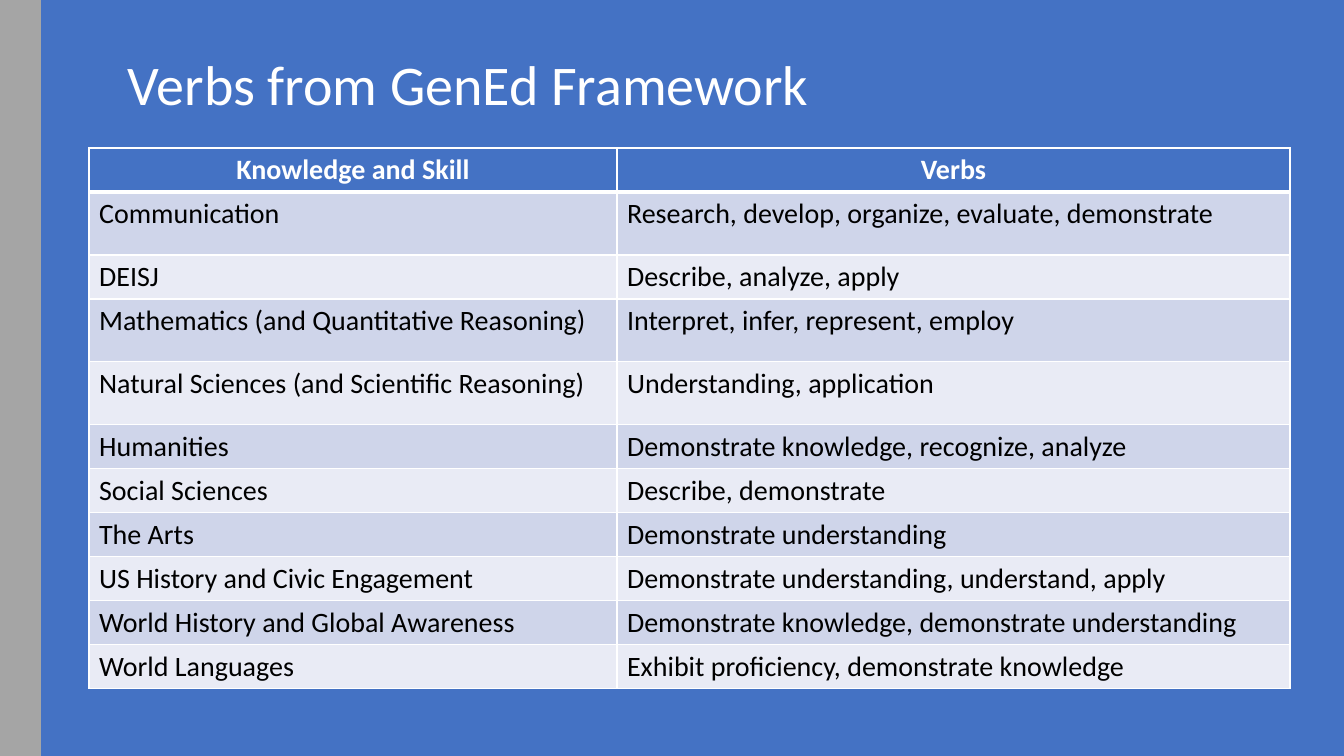
from lxml.etree import SubElement
from pptx import Presentation
from pptx.dml.color import RGBColor
from pptx.enum.shapes import MSO_SHAPE
from pptx.enum.text import MSO_ANCHOR, PP_ALIGN
from pptx.oxml.ns import qn
from pptx.util import Emu, Pt

SCALE = 914400 / 100.8
HUES = {"blue": "4472C4", "gray": "A5A5A5", "white": "FFFFFF",
        "black": "000000", "dark": "CFD5EA", "light": "E9EBF5"}
SHORT, TALL = 44, 63
ROWS = [
    ("Knowledge and Skill", "Verbs", SHORT),
    ("Communication", "Research, develop, organize, evaluate, demonstrate", TALL),
    ("DEISJ", "Describe, analyze, apply", SHORT),
    ("Mathematics (and Quantitative Reasoning)", "Interpret, infer, represent, employ", TALL),
    ("Natural Sciences (and Scientific Reasoning)", "Understanding, application", TALL),
    ("Humanities", "Demonstrate knowledge, recognize, analyze", SHORT),
    ("Social Sciences", "Describe, demonstrate", SHORT),
    ("The Arts", "Demonstrate understanding", SHORT),
    ("US History and Civic Engagement", "Demonstrate understanding, understand, apply", SHORT),
    ("World History and Global Awareness", "Demonstrate knowledge, demonstrate understanding", SHORT),
    ("World Languages", "Exhibit proficiency, demonstrate knowledge", SHORT),
]


def px(size):
    return Emu(round(size * SCALE))


def hue(name):
    return RGBColor.from_string(HUES[name])


class Deck:
    """Hold the style and the current slide, and draw each kind of element."""

    def __init__(self, wide, high):
        self.file = Presentation()
        self.file.slide_width, self.file.slide_height = px(wide), px(high)
        self.slide = self.file.slides.add_slide(self.file.slide_layouts[6])
        self.font = {"name": "Calibri", "size": Pt(20), "bold": False}

    def label(self, frame, text, color, align=PP_ALIGN.LEFT, **style):
        para = frame.paragraphs[0]
        para.alignment = align
        run = para.add_run()
        run.text = text
        for key, value in {**self.font, **style}.items():
            setattr(run.font, key, value)
        run.font.color.rgb = hue(color)
        return para

    def panel(self, box, color):
        shape = self.slide.shapes.add_shape(MSO_SHAPE.RECTANGLE, *map(px, box))
        shape.shadow.inherit = False
        shape.fill.solid()
        shape.fill.fore_color.rgb = hue(color)
        shape.line.fill.background()

    def title(self, box, text):
        frame = self.slide.shapes.add_textbox(*map(px, box)).text_frame
        for key, value in {"word_wrap": True, "vertical_anchor": MSO_ANCHOR.BOTTOM}.items():
            setattr(frame, key, value)
        self.label(frame, text, "white", size=Pt(40)).line_spacing = 0.9

    def edge(self, cell, sides):
        props = cell._tc.get_or_add_tcPr()
        for spot, (side, width) in enumerate(sides.items()):
            line = SubElement(props, qn(f"a:ln{side}"), w=str(Pt(width)))
            fill = SubElement(line, qn("a:solidFill"))
            SubElement(fill, qn("a:srgbClr"), val=HUES["white"])
            props.insert(spot, line)

    def table(self, left, top, cols, rows):
        box = left, top, sum(cols), sum(row[-1] for row in rows)
        grid = self.slide.shapes.add_table(len(rows), len(cols), *map(px, box)).table
        for col, width in zip(grid.columns, cols):
            col.width = px(width)
        for i, (*texts, height) in enumerate(rows):
            grid.rows[i].height = px(height)
            head = i == 0
            back = "blue" if head else "dark" if i % 2 else "light"
            align = PP_ALIGN.CENTER if head else PP_ALIGN.LEFT
            sides = {"L": 1, "R": 1, "T": 3 if i == 1 else 1, "B": 3 if head else 1}
            for j, text in enumerate(texts):
                cell = grid.cell(i, j)
                cell.fill.solid()
                cell.fill.fore_color.rgb = hue(back)
                self.label(cell.text_frame, text, "white" if head else "black", align, bold=head)
                self.edge(cell, sides)


def main():
    deck = Deck(1344, 756)
    deck.panel((22, 0, 1322, 756), "blue")
    deck.panel((0, 0, 41, 756), "gray")
    deck.title((118, 9, 998, 114), "Verbs from GenEd Framework")
    deck.table(89, 148, (528, 673), ROWS)
    deck.file.save("out.pptx")


if __name__ == "__main__":
    main()
